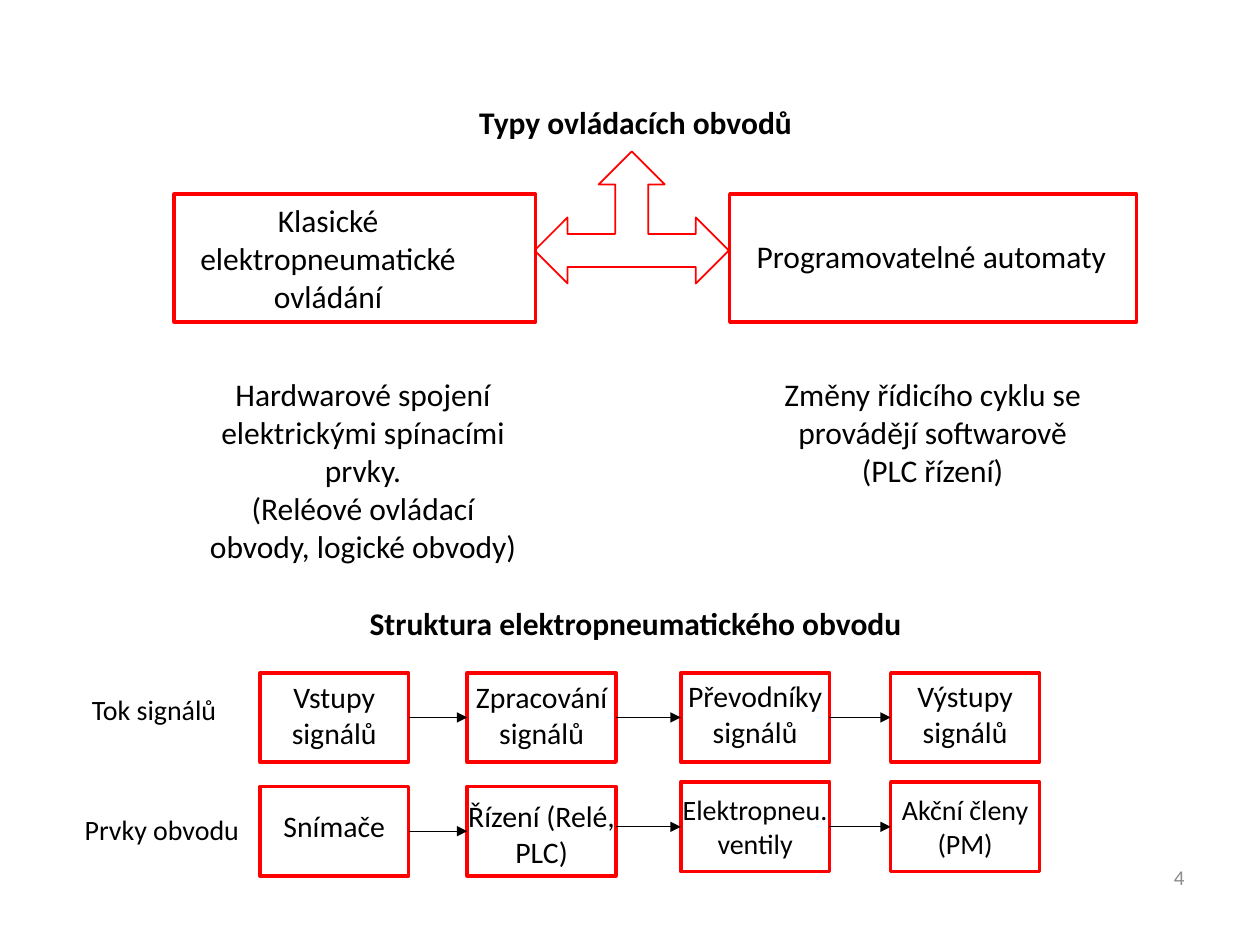
from pptx import Presentation
from pptx.dml.color import RGBColor
from pptx.enum.shapes import MSO_CONNECTOR, MSO_SHAPE
from pptx.enum.text import MSO_ANCHOR, PP_ALIGN
from pptx.oxml.ns import qn
from pptx.util import Pt
from lxml.etree import SubElement

RED, BLACK, GREY = "FF0000", "000000", "8C8C8C"
TOP, LEFT, BOTTOM, RIGHT = range(4)


def color(value):
    return RGBColor.from_string(value)


def add_text(page, box, lines, size=18, ink=BLACK, bold=False,
             align=PP_ALIGN.CENTER, anchor=MSO_ANCHOR.TOP):
    frame = page.shapes.add_textbox(*map(Pt, box)).text_frame
    for name, value in {"word_wrap": True, "vertical_anchor": anchor}.items():
        setattr(frame, name, value)
    for index, line in enumerate(lines):
        para = frame.add_paragraph() if index else frame.paragraphs[0]
        para.alignment = align
        span = para.add_run()
        span.text = line
        for name, value in {"name": "Calibri", "size": Pt(size), "bold": bold}.items():
            setattr(span.font, name, value)
        span.font.color.rgb = color(ink)


def add_outline(page, box, kind=MSO_SHAPE.RECTANGLE, weight=2):
    shape = page.shapes.add_shape(kind, *map(Pt, box))
    shape.shadow.inherit = False
    shape.fill.background()
    shape.line.color.rgb = color(RED)
    shape.line.width = Pt(weight)
    return shape


def add_arrow(page, start, end):
    """Level arrow between two boxes, joined where it meets the middle of a side."""
    start_middle = start.top + start.height // 2
    end_middle = end.top + end.height // 2
    arrow = page.shapes.add_connector(MSO_CONNECTOR.STRAIGHT, start.left + start.width,
                                      end_middle, end.left, end_middle)
    if start_middle == end_middle:
        arrow.begin_connect(start, RIGHT)
    arrow.end_connect(end, LEFT)
    arrow.line.color.rgb = color(BLACK)
    arrow.line.width = Pt(0.75)
    properties = arrow._element.spPr
    SubElement(properties.find(qn("a:ln")), qn("a:tailEnd"), type="triangle")
    SubElement(properties, qn("a:effectLst"))


def add_circuit_types(page, box):
    left, top, width, height = box
    add_text(page, (left, top, width, 29), ["Typy ovládacích obvodů"], bold=True)
    box_top = top + 55.5
    add_outline(page, (left + 57, box_top, 206.5, 73))
    add_outline(page, (left + 374.5, box_top, 232.5, 73))
    add_outline(page, (left + 263, top + 31, 111, 75.5),
                MSO_SHAPE.LEFT_RIGHT_UP_ARROW, 1)
    add_text(page, (left + 34.5, box_top + 0.5, 221, 73),
             ["Klasické elektropneumatické ovládání"])
    add_text(page, (left + 345, box_top + 21, 289.5, 29), ["Programovatelné automaty"])
    note_top = top + 155.5
    add_text(page, (left + 67, note_top, 196, 117),
             ["Hardwarové spojení elektrickými spínacími prvky.",
              "(Reléové ovládací obvody, logické obvody)"])
    add_text(page, (left + 397.5, note_top, 186, 94),
             ["Změny řídicího cyklu se provádějí softwarově", "(PLC řízení)"])


def add_stage_row(page, box, label, stages):
    """Label and boxes joined by arrows; a stage is text, size, box and text offsets."""
    left, top, width, height = box
    name, label_width, label_drop = label
    add_text(page, (left, top + label_drop, label_width, 26.5), [name], 16)
    lefts = (114, 232.5, 354.5, 474.5)
    outlines = []
    for offset, (text, size, box_drop, text_drop) in zip(lefts, stages):
        outlines.append(add_outline(page, (left + offset, top + box_drop, 85, height)))
        add_text(page, (left + offset - 11, top + text_drop, 107, 48), [text], size)
    for start, end in zip(outlines, outlines[1:]):
        add_arrow(page, start, end)


def add_circuit_structure(page, box):
    left, top, width, height = box
    add_text(page, (left, top, width, 29), ["Struktura elektropneumatického obvodu"],
             bold=True)
    rows = [
        (43, ("Tok signálů", 107, 7.5), [
            ("Vstupy signálů", 17, 0, 0),
            ("Zpracování signálů", 17, 0, 0),
            ("Převodníky signálů", 17, 0, -0.5),
            ("Výstupy signálů", 17, 0, -0.5)]),
        (108, ("Prvky obvodu", 116, 11), [
            ("Snímače", 17, 0, 8.5),
            ("Řízení (Relé, PLC)", 17, 0, 3),
            ("Elektropneu. ventily", 16, -2.5, 0),
            ("Akční členy (PM)", 16, -2.5, 0)]),
    ]
    for drop, label, stages in rows:
        add_stage_row(page, (left - 8, top + drop, width, 51), label, stages)


def main():
    deck = Presentation()
    deck.slide_width, deck.slide_height = Pt(720), Pt(540)
    page = deck.slides.add_slide(deck.slide_layouts[6])
    add_circuit_types(page, (42.5, 55.5, 641.5, 273))
    add_circuit_structure(page, (42.5, 341.5, 641.5, 160))
    add_text(page, (516, 487.5, 168, 27.5), ["4"], 12, GREY,
             align=PP_ALIGN.RIGHT, anchor=MSO_ANCHOR.MIDDLE)
    deck.save("out.pptx")


if __name__ == "__main__":
    main()
